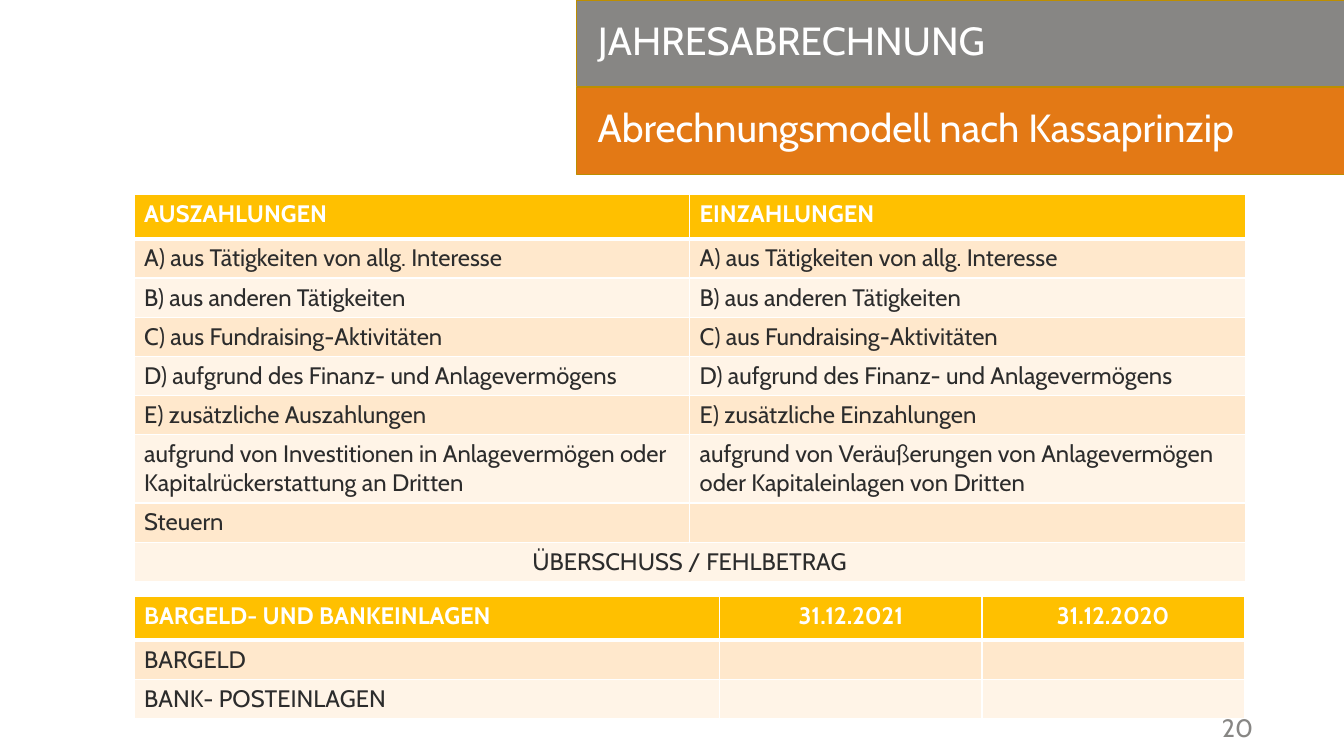
import pptx
import pptx.dml.color
import pptx.enum.shapes
import pptx.enum.text
import pptx.oxml
import pptx.oxml.ns
import pptx.util
from pptx.util import Inches

RGBColor = pptx.dml.color.RGBColor
ALIGN = pptx.enum.text.PP_ALIGN
ANCHOR = pptx.enum.text.MSO_ANCHOR

FONT = "Cabin"
WHITE = RGBColor(0xFF, 0xFF, 0xFF)
GRAY = RGBColor(0x87, 0x86, 0x84)
ORANGE = RGBColor(0xE3, 0x79, 0x15)
OUTLINE = RGBColor(0xBD, 0x8E, 0x00)
INK = RGBColor(0x2C, 0x2C, 0x2C)
HEADER = RGBColor(0xFF, 0xC0, 0x00)
BANDS = (RGBColor(0xFF, 0xE8, 0xCC), RGBColor(0xFF, 0xF4, 0xE7))

TABLE_LEFT = 1.33
CASH_FLOW_ROWS = [
    ("AUSZAHLUNGEN", "EINZAHLUNGEN"),
    ("A) aus Tätigkeiten von allg. Interesse", "A) aus Tätigkeiten von allg. Interesse"),
    ("B) aus anderen Tätigkeiten", "B) aus anderen Tätigkeiten"),
    ("C) aus Fundraising-Aktivitäten", "C) aus Fundraising-Aktivitäten"),
    ("D) aufgrund des Finanz- und Anlagevermögens",
     "D) aufgrund des Finanz- und Anlagevermögens"),
    ("E) zusätzliche Auszahlungen", "E) zusätzliche Einzahlungen"),
    ("aufgrund von Investitionen in Anlagevermögen oder Kapitalrückerstattung an Dritten",
     "aufgrund von Veräußerungen von Anlagevermögen oder Kapitaleinlagen von Dritten"),
    ("Steuern", ""),
    ("ÜBERSCHUSS / FEHLBETRAG", ""),
]
DEPOSIT_ROWS = [
    ("BARGELD- UND BANKEINLAGEN", "31.12.2021", "31.12.2020"),
    ("BARGELD", "", ""),
    ("BANK- POSTEINLAGEN", "", ""),
]


def write_text(frame, text, size=17, color=INK, bold=False, align=ALIGN.LEFT, spacing=None):
    paragraph = frame.paragraphs[0]
    paragraph.alignment = align
    if spacing:
        paragraph.line_spacing = spacing
    run = paragraph.add_run()
    run.text = text
    run.font.name = FONT
    run.font.size = pptx.util.Pt(size)
    run.font.bold = bold
    run.font.color.rgb = color


def write_heading(shape, text):
    shape.text_frame.word_wrap = True
    shape.text_frame.auto_size = pptx.enum.text.MSO_AUTO_SIZE.NONE
    shape.text_frame.vertical_anchor = ANCHOR.MIDDLE
    write_text(shape.text_frame, text, size=28, color=WHITE, spacing=0.85)


def add_bar(shapes, left, top, width, height, fill, line=None):
    bar = shapes.add_shape(pptx.enum.shapes.MSO_SHAPE.RECTANGLE, Inches(left), Inches(top),
                           Inches(width), Inches(height))
    bar.shadow.inherit = False
    bar.fill.solid()
    bar.fill.fore_color.rgb = fill
    if line:
        bar.line.color.rgb = line
        bar.line.width = pptx.util.Pt(1)
    else:
        bar.line.fill.background()
    return bar


def set_borders(cell, top=1, bottom=1):
    properties = cell._tc.get_or_add_tcPr()
    widths = {"lnL": 1, "lnR": 1, "lnT": top, "lnB": bottom}
    for index, (side, width) in enumerate(widths.items()):
        properties.insert(index, pptx.oxml.parse_xml(
            f'<a:{side} {pptx.oxml.ns.nsdecls("a")} w="{pptx.util.Pt(width)}">'
            f'<a:solidFill><a:srgbClr val="{WHITE}"/></a:solidFill></a:{side}>'))


def add_banded_table(slide, top, rows, column_widths, row_heights, centered_header=()):
    table = slide.shapes.add_table(
        len(rows), len(column_widths), Inches(TABLE_LEFT), Inches(top),
        Inches(sum(column_widths)), Inches(sum(row_heights))).table
    for column, width in zip(table.columns, column_widths):
        column.width = Inches(width)
    for row_index, texts in enumerate(rows):
        table.rows[row_index].height = Inches(row_heights[row_index])
        is_header = row_index == 0
        for column_index, text in enumerate(texts):
            cell = table.cell(row_index, column_index)
            cell.fill.solid()
            cell.fill.fore_color.rgb = HEADER if is_header else BANDS[(row_index - 1) % 2]
            set_borders(cell, top=3 if row_index == 1 else 1, bottom=3 if is_header else 1)
            if text:
                centered = is_header and column_index in centered_header
                write_text(cell.text_frame, text, bold=is_header,
                           color=WHITE if is_header else INK,
                           align=ALIGN.CENTER if centered else ALIGN.LEFT)
            else:
                # Keep empty cells from stretching the row
                cell.margin_top = cell.margin_bottom = 0
    return table


def main():
    presentation = pptx.Presentation()
    presentation.slide_width = Inches(13.33)
    presentation.slide_height = Inches(7.5)
    slide = presentation.slides.add_slide(presentation.slide_layouts[5])

    # Page number
    number = slide.shapes.add_textbox(Inches(12.02), Inches(7.02), Inches(0.66), Inches(0.4))
    number.text_frame.word_wrap = False
    write_text(number.text_frame, "20", size=18, color=GRAY)

    # Title on its gray bar
    title_bar = add_bar(slide.shapes, 5.72, 0, 7.62, 0.86, GRAY, OUTLINE)
    title = slide.shapes.title
    title.left, title.top = Inches(5.83), Inches(0.08)
    title.width, title.height = Inches(7.5), Inches(0.7)
    write_heading(title, "JAHRESABRECHNUNG")
    title_bar.element.addnext(title.element)

    # Subtitle on its orange bar
    subtitle_group = slide.shapes.add_group_shape()
    add_bar(subtitle_group.shapes, 5.72, 0.87, 7.62, 0.86, ORANGE, OUTLINE)
    subtitle = add_bar(subtitle_group.shapes, 5.83, 0.95, 7.5, 0.7, ORANGE)
    write_heading(subtitle, "Abrechnungsmodell nach Kassaprinzip")

    # Payments out and in, with the result across both columns
    cash_flow = add_banded_table(slide, 1.93, CASH_FLOW_ROWS, [5.51] * 2,
                                 [0.44] + [0.37] * 5 + [0.64] + [0.37] * 2)
    result = cash_flow.cell(8, 0)
    result.merge(cash_flow.cell(8, 1))
    result.text_frame.paragraphs[0].alignment = ALIGN.CENTER

    # Cash and bank deposits
    add_banded_table(slide, 5.92, DEPOSIT_ROWS, [5.81, 2.6, 2.6], [0.43, 0.37, 0.37],
                     centered_header=(1, 2))

    presentation.save("out.pptx")


if __name__ == "__main__":
    main()
